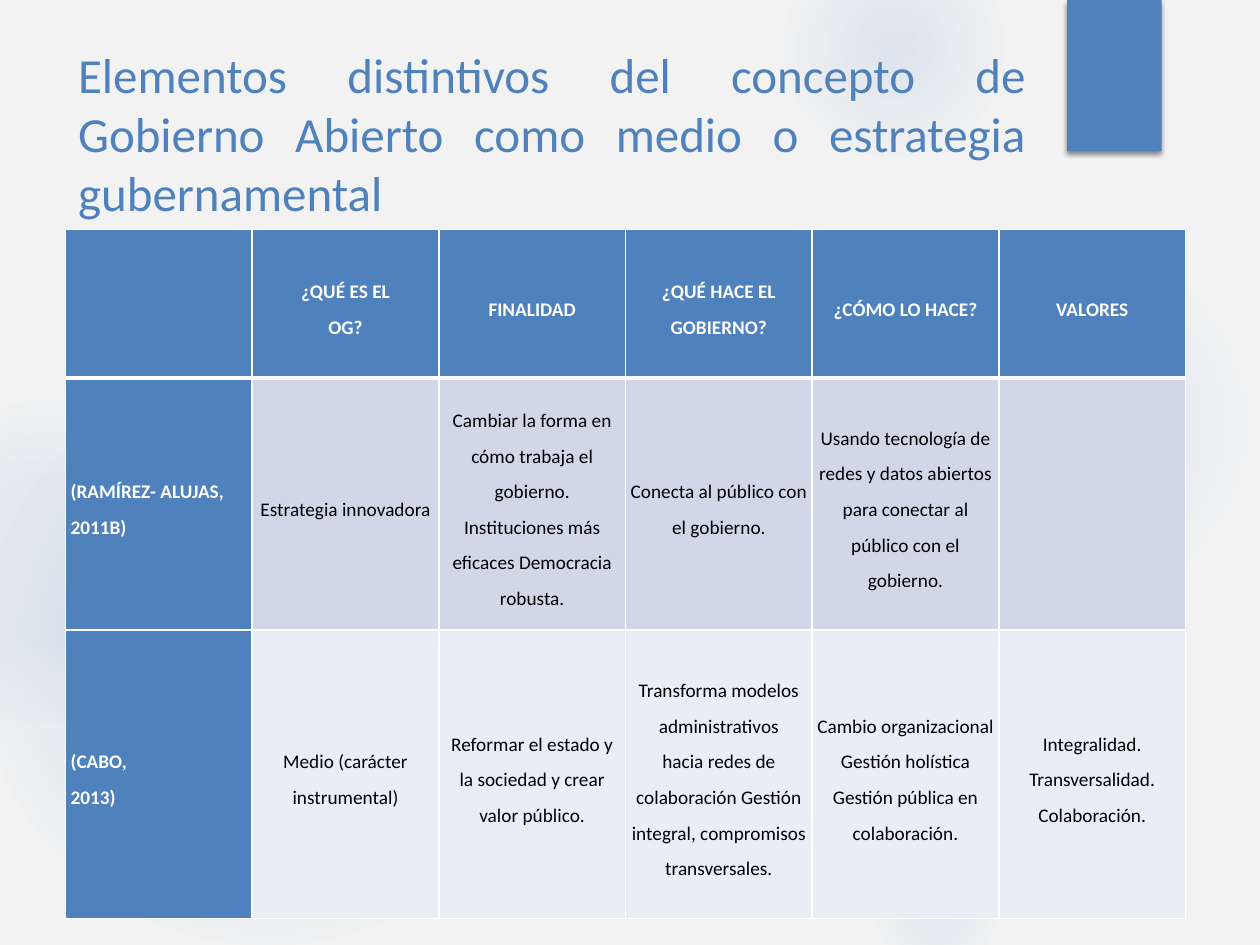
from copy import deepcopy
from dataclasses import dataclass

from lxml.etree import SubElement
from pptx import Presentation
from pptx.dml.color import RGBColor
from pptx.enum.shapes import MSO_SHAPE
from pptx.enum.text import MSO_ANCHOR, MSO_AUTO_SIZE, PP_ALIGN
from pptx.oxml.ns import qn
from pptx.util import Inches, Pt


@dataclass(frozen=True)
class Theme:
    font: str = "Calibri"
    title_size: int = 28
    cell_size: int = 11
    background: str = "F2F2F2"
    accent: str = "4F81BD"
    glow: str = "558ED5"
    light: str = "FFFFFF"
    dark: str = "000000"
    bands: tuple[str, ...] = ("D0D8E8", "E9EDF4")
    thin_border: float = 1
    thick_border: float = 3


@dataclass(frozen=True)
class Glow:
    left: float
    top: float
    diameter: float
    stops: tuple[tuple[int, int], ...]  # position and opacity, in percent


THEME = Theme()
LEFT_MARGIN, TABLE_TOP, TABLE_WIDTH = 0.52, 1.82, 8.89
ROW_HEIGHTS = (1.18, 2.0, 2.29)
TITLE = "Elementos distintivos del concepto de Gobierno Abierto como medio o estrategia gubernamental"
GLOWS = (
    Glow(6.89, 1.83, 3.08, ((0, 7), (36, 6), (69, 0))),
    Glow(6.22, -0.5, 1.75, ((0, 14), (36, 7), (73, 0))),
    Glow(6.89, 6.67, 1.08, ((0, 9), (36, 5), (66, 0))),
    Glow(-0.17, 2.92, 4.58, ((0, 11), (36, 10), (75, 0))),
    Glow(-0.92, 3.17, 2.58, ((0, 8), (36, 8), (72, 0))),
)
ROWS = (
    ("", "¿QUÉ ES EL\nOG?", "FINALIDAD", "¿QUÉ HACE EL GOBIERNO?", "¿CÓMO LO HACE?", "VALORES"),
    (
        "(RAMÍREZ- ALUJAS,\n2011B)",
        "Estrategia innovadora",
        "Cambiar la forma en cómo trabaja el\ngobierno. Instituciones más eficaces Democracia\nrobusta.",
        "Conecta al público con el gobierno.",
        "Usando tecnología de redes y datos abiertos para conectar al público con el gobierno.",
        "",
    ),
    (
        "(CABO,\n2013)",
        "Medio (carácter instrumental)",
        "Reformar el estado y la sociedad y crear valor público.",
        "Transforma modelos administrativos\nhacia redes de colaboración Gestión integral, compromisos\ntransversales.",
        "Cambio organizacional Gestión holística\nGestión pública en\ncolaboración.",
        "Integralidad. Transversalidad. Colaboración.",
    ),
)


def add_color(parent, color: str, opacity: int = 100) -> None:
    element = SubElement(parent, qn("a:srgbClr"), val=color)
    if opacity < 100:
        SubElement(element, qn("a:alpha"), val=str(opacity * 1000))


def style_run(run, size: int, color: str, bold: bool = False) -> None:
    run.font.name = THEME.font
    run.font.size = Pt(size)
    run.font.bold = bold
    run.font.color.rgb = RGBColor.from_string(color)


def add_glow(slide, glow: Glow) -> None:
    """Draw a circle whose colour fades out from its centre."""
    diameter = Inches(glow.diameter)
    shape = slide.shapes.add_shape(
        MSO_SHAPE.OVAL, Inches(glow.left), Inches(glow.top), diameter, diameter)
    shape.shadow.inherit = False
    shape.line.fill.background()
    shape.fill.gradient()
    gradient = shape._element.spPr.find(qn("a:gradFill"))
    for child in list(gradient):
        gradient.remove(child)
    stop_list = SubElement(gradient, qn("a:gsLst"))
    for position, opacity in glow.stops:
        stop = SubElement(stop_list, qn("a:gs"), pos=str(position * 1000))
        add_color(stop, THEME.glow, opacity)
    circle = SubElement(gradient, qn("a:path"), path="circle")
    SubElement(circle, qn("a:fillToRect"), dict.fromkeys("ltrb", "50000"))


def add_ribbon(slide) -> None:
    shape = slide.shapes.add_shape(
        MSO_SHAPE.RECTANGLE, Inches(8.47), 0, Inches(0.75), Inches(1.2))
    shape.fill.solid()
    shape.fill.fore_color.rgb = RGBColor.from_string(THEME.accent)
    shape.line.fill.background()
    shape.shadow.inherit = False
    effects = shape._element.spPr.find(qn("a:effectLst"))
    shadow = SubElement(effects, qn("a:outerShdw"), blurRad=str(Pt(3)), dist=str(Pt(2)),
                        dir=str(90 * 60000), algn="ctr", rotWithShape="0")
    add_color(shadow, THEME.dark, 45)


def format_title(slide) -> None:
    title = slide.shapes.title
    title.left, title.top = Inches(LEFT_MARGIN), Inches(0.29)
    title.width, title.height = Inches(7.72), Inches(1.53)
    frame = title.text_frame
    frame.text = TITLE
    frame.word_wrap = True
    frame.auto_size = MSO_AUTO_SIZE.NONE
    frame.vertical_anchor = MSO_ANCHOR.MIDDLE
    paragraph = frame.paragraphs[0]
    paragraph.alignment = PP_ALIGN.JUSTIFY
    style_run(paragraph.runs[0], THEME.title_size, THEME.accent)
    slide.shapes._spTree.append(title._element)  # in front of the glows


def set_borders(cell, top: float, bottom: float) -> None:
    properties = cell._tc.get_or_add_tcPr()
    widths = {"L": THEME.thin_border, "R": THEME.thin_border, "T": top, "B": bottom}
    for side, width in widths.items():
        line = SubElement(properties, qn(f"a:ln{side}"), w=str(Pt(width)))
        add_color(SubElement(line, qn("a:solidFill")), THEME.light)


def fill_cell(cell, text: str, row: int, column: int) -> None:
    is_heading = row == 0 or column == 0
    set_borders(cell,
                top=THEME.thick_border if row == 1 else THEME.thin_border,
                bottom=THEME.thick_border if row == 0 else THEME.thin_border)
    cell.fill.solid()
    color = THEME.accent if is_heading else THEME.bands[row - 1]
    cell.fill.fore_color.rgb = RGBColor.from_string(color)
    if not text:
        return
    cell.vertical_anchor = MSO_ANCHOR.MIDDLE
    cell.margin_left = cell.margin_right = Inches(0.04)
    cell.margin_top = cell.margin_bottom = 0
    paragraph = cell.text_frame.paragraphs[0]
    paragraph.text = text
    paragraph.line_spacing = 1.5
    paragraph.alignment = PP_ALIGN.LEFT if column == 0 else PP_ALIGN.CENTER
    for run in paragraph.runs:
        style_run(run, THEME.cell_size, THEME.light if is_heading else THEME.dark, is_heading)
    for line_break in paragraph._p.findall(qn("a:br")):
        line_break.append(deepcopy(paragraph.runs[0]._r.rPr))


def add_comparison_table(slide) -> None:
    column_count = len(ROWS[0])
    table = slide.shapes.add_table(
        len(ROWS), column_count, Inches(LEFT_MARGIN), Inches(TABLE_TOP),
        Inches(TABLE_WIDTH), Inches(sum(ROW_HEIGHTS))).table
    for column in table.columns:
        column.width = Inches(TABLE_WIDTH / column_count)
    for row, (height, texts) in enumerate(zip(ROW_HEIGHTS, ROWS)):
        table.rows[row].height = Inches(height)
        for column, text in enumerate(texts):
            fill_cell(table.cell(row, column), text, row, column)


def main() -> None:
    presentation = Presentation()
    presentation.slide_width, presentation.slide_height = Inches(10), Inches(7.5)
    slide = presentation.slides.add_slide(presentation.slide_layouts.get_by_name("Title Only"))
    slide.background.fill.solid()
    slide.background.fill.fore_color.rgb = RGBColor.from_string(THEME.background)
    for glow in GLOWS:
        add_glow(slide, glow)
    add_ribbon(slide)
    format_title(slide)
    add_comparison_table(slide)
    presentation.save("out.pptx")


if __name__ == "__main__":
    main()
